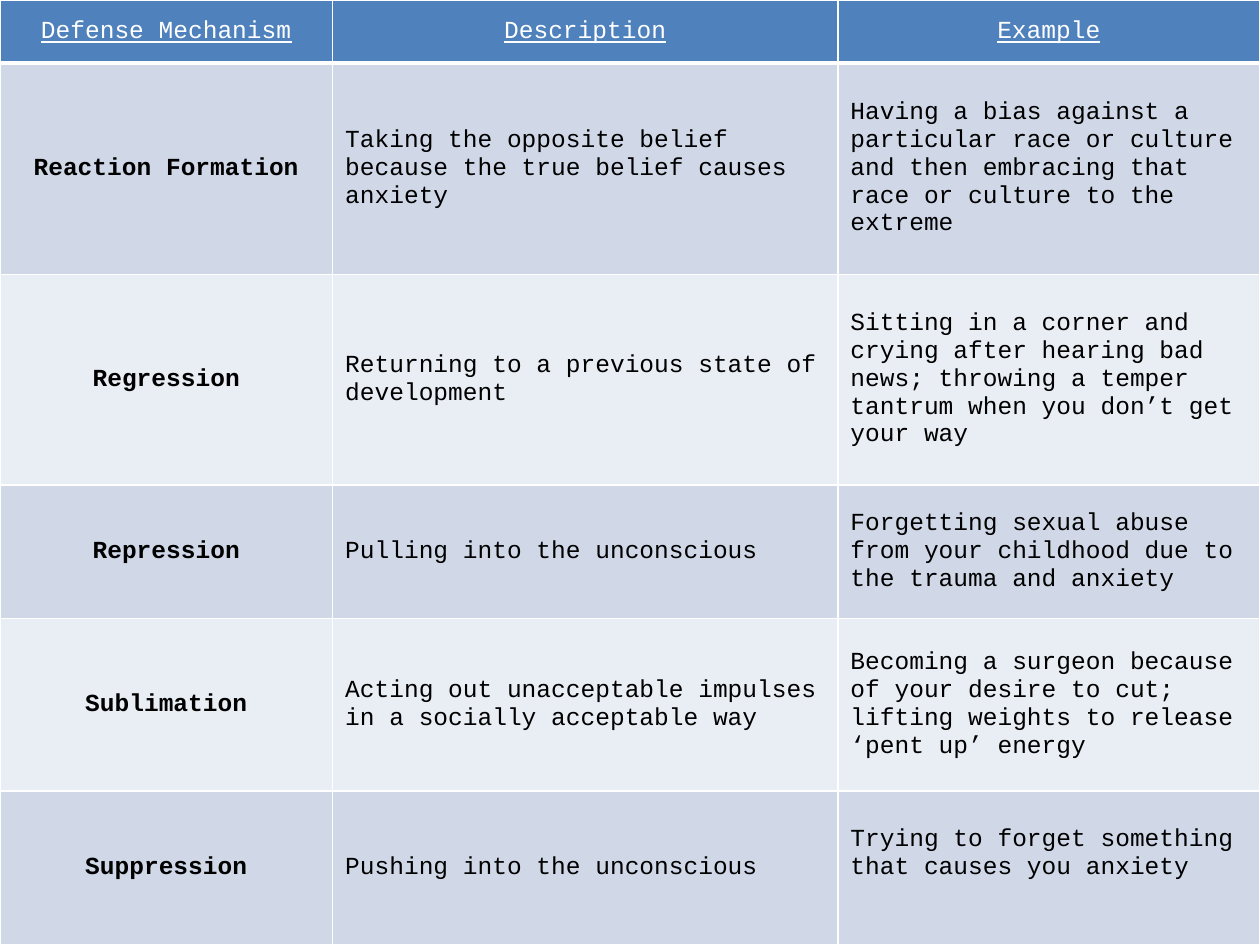
"""Build a slide with a table of psychological defense mechanisms."""
from dataclasses import dataclass

from lxml import etree
from pptx import Presentation
from pptx.dml.color import RGBColor
from pptx.enum.text import MSO_ANCHOR, PP_ALIGN
from pptx.oxml.ns import qn
from pptx.util import Inches, Pt

MIDDLE = MSO_ANCHOR.MIDDLE
CENTER = PP_ALIGN.CENTER
LEFT = PP_ALIGN.LEFT
BLANK_LAYOUT = 6


@dataclass(frozen=True)
class Theme:
    """Colours, type and rule widths of the table."""
    font: str = "Courier New"
    size: float = 14
    header_fill: str = "4F81BD"
    header_text: str = "FFFFFF"
    body_text: str = "000000"
    bands: tuple = ("D0D8E8", "E9EDF4")
    rule: str = "FFFFFF"
    thin: float = 1
    thick: float = 3


THEME = Theme()
SLIDE_WIDTH, SLIDE_HEIGHT = Inches(10), Inches(7.5)
COLUMN_SHARES = (0.264, 0.401, 0.335)
ROW_HEIGHTS = (0.5, 1.68, 1.67, 1.06, 1.37, 1.22)
RAISED_MARGIN = Inches(0.27)

HEADINGS = ("Defense Mechanism", "Description", "Example")
MECHANISMS = (
    ("Reaction Formation",
     "Taking the opposite belief because the true belief causes anxiety",
     "Having a bias against a particular race or culture and then embracing "
     "that race or culture to the extreme"),
    ("Regression",
     "Returning to a previous state of development",
     "Sitting in a corner and crying after hearing bad news; throwing a "
     "temper tantrum when you don’t get your way"),
    ("Repression",
     "Pulling into the unconscious",
     "Forgetting sexual abuse from your childhood due to the trauma and anxiety"),
    ("Sublimation",
     "Acting out unacceptable impulses in a socially acceptable way",
     "Becoming a surgeon because of your desire to cut; lifting weights to "
     "release ‘pent up’ energy"),
    ("Suppression",
     "Pushing into the unconscious",
     "Trying to forget something that causes you anxiety"),
)


def rule_cell(cell, bottom):
    """Draw the four borders of a cell."""
    properties = cell._tc.get_or_add_tcPr()
    widths = {"a:lnL": THEME.thin, "a:lnR": THEME.thin,
              "a:lnT": THEME.thin, "a:lnB": bottom}
    for side, width in widths.items():
        line = etree.SubElement(properties, qn(side), w=str(Pt(width)))
        solid = etree.SubElement(line, qn("a:solidFill"))
        etree.SubElement(solid, qn("a:srgbClr"), val=THEME.rule)


def fill_cell(cell, wording, fill, color, align, bottom=THEME.thin, **emphasis):
    """Write and format one table cell."""
    rule_cell(cell, bottom)
    cell.fill.solid()
    cell.fill.fore_color.rgb = RGBColor.from_string(fill)
    cell.vertical_anchor = MIDDLE
    paragraph = cell.text_frame.paragraphs[0]
    paragraph.alignment = align
    run = paragraph.add_run()
    run.text = wording
    run.font.color.rgb = RGBColor.from_string(color)
    formats = {"name": THEME.font, "size": Pt(THEME.size), "bold": False, **emphasis}
    for attribute, value in formats.items():
        setattr(run.font, attribute, value)


def add_grid(slide):
    """Add the empty table and size its columns and rows."""
    table = slide.shapes.add_table(len(ROW_HEIGHTS), len(COLUMN_SHARES),
                                   0, 0, SLIDE_WIDTH, SLIDE_HEIGHT).table
    for column, share in zip(table.columns, COLUMN_SHARES):
        column.width = round(SLIDE_WIDTH * share)
    for row, height in zip(table.rows, ROW_HEIGHTS):
        row.height = Inches(height)
    return table


def fill_header(table):
    """Write the underlined column headings."""
    for column, heading in enumerate(HEADINGS):
        fill_cell(table.cell(0, column), heading, THEME.header_fill,
                  THEME.header_text, CENTER, THEME.thick, underline=True)


def fill_body(table):
    """Write the banded rows, with the mechanism in bold."""
    for row, mechanism in enumerate(MECHANISMS, start=1):
        band = THEME.bands[(row - 1) % len(THEME.bands)]
        for column, wording in enumerate(mechanism):
            is_name = column == 0
            fill_cell(table.cell(row, column), wording, band, THEME.body_text,
                      CENTER if is_name else LEFT, bold=is_name)


def main():
    """Build and save the presentation."""
    presentation = Presentation()
    presentation.slide_width = SLIDE_WIDTH
    presentation.slide_height = SLIDE_HEIGHT
    slide = presentation.slides.add_slide(presentation.slide_layouts[BLANK_LAYOUT])
    table = add_grid(slide)
    fill_header(table)
    fill_body(table)
    last_example = table.cell(len(MECHANISMS), len(HEADINGS) - 1)
    last_example.margin_bottom = RAISED_MARGIN
    presentation.save("out.pptx")


if __name__ == "__main__":
    main()
